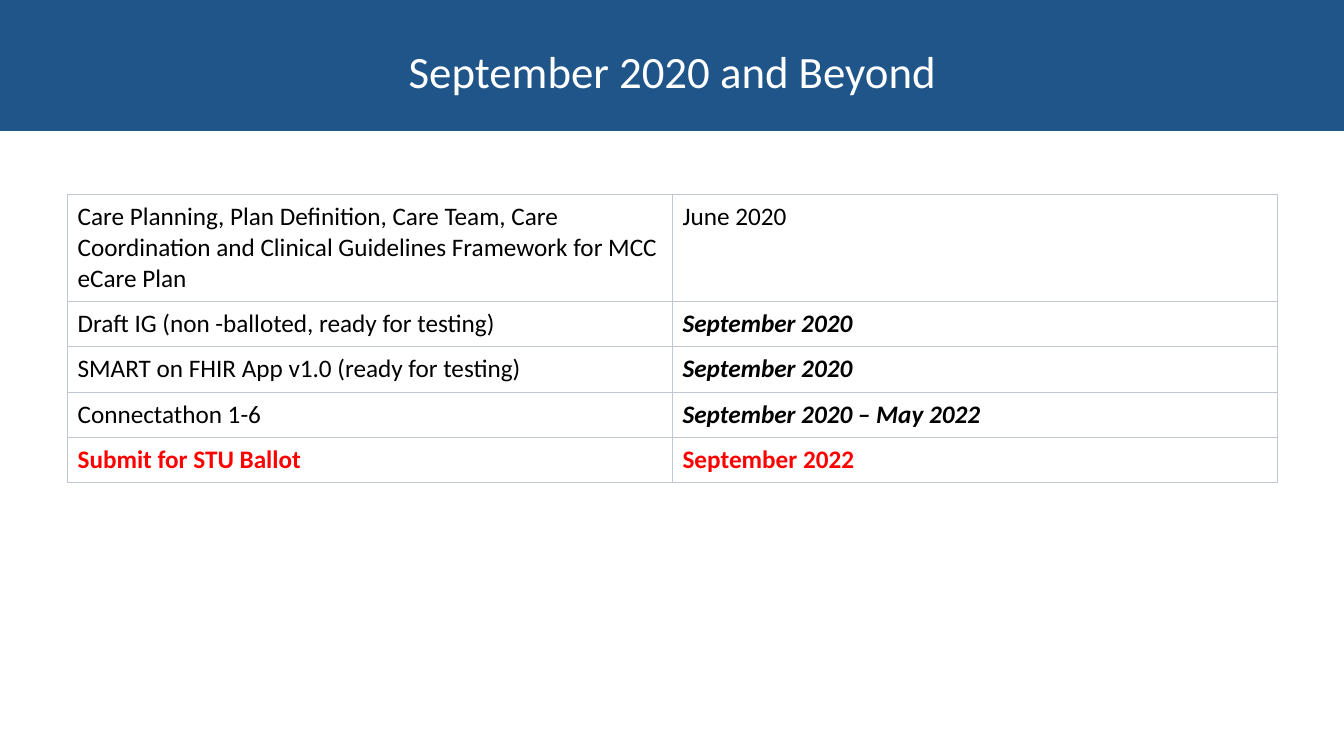
"""Builds the "September 2020 and Beyond" milestone slide."""
from dataclasses import dataclass

from lxml.etree import SubElement
from pptx import Presentation
from pptx.dml.color import RGBColor
from pptx.enum.shapes import MSO_SHAPE
from pptx.enum.text import MSO_ANCHOR, PP_ALIGN
from pptx.oxml.ns import qn
from pptx.slide import Slide
from pptx.table import _Cell
from pptx.text.text import _Paragraph
from pptx.util import Inches, Pt

BLUE = RGBColor(0x20, 0x55, 0x8A)
WHITE = RGBColor(0xFF, 0xFF, 0xFF)
BLACK = RGBColor(0x00, 0x00, 0x00)
RED = RGBColor(0xFF, 0x00, 0x00)
BORDER = RGBColor(0xC1, 0xC7, 0xD0)
FONT = "Calibri"


@dataclass(frozen=True)
class Milestone:
    """One table row: a deliverable and its date."""
    task: str
    date: str
    height: float = 0.45
    color: RGBColor = BLACK
    task_bold: bool = False
    date_bold: bool = True
    date_italic: bool = True


MILESTONES = [
    Milestone("Care Planning, Plan Definition, Care Team, Care Coordination and "
              "Clinical Guidelines Framework for MCC eCare Plan", "June 2020",
              height=1.06, date_bold=False, date_italic=False),
    Milestone("Draft IG (non -balloted, ready for testing)", "September 2020"),
    Milestone("SMART on FHIR App v1.0 (ready for testing)", "September 2020"),
    Milestone("Connectathon 1-6", "September 2020 – May 2022"),
    Milestone("Submit for STU Ballot", "September 2022", color=RED,
              task_bold=True, date_italic=False),
]


def add_run(p: _Paragraph, text: str, size: int, color: RGBColor,
            bold: bool = False, italic: bool = False) -> None:
    """Add one formatted run to a paragraph."""
    r = p.add_run()
    r.text = text
    r.font.name = FONT
    r.font.size = Pt(size)
    r.font.color.rgb = color
    r.font.bold = bold
    r.font.italic = italic


def add_header(s: Slide, width: int) -> None:
    """Draw the blue band and the title on it."""
    band = s.shapes.add_shape(MSO_SHAPE.RECTANGLE, 0, 0, width, Inches(1.3))
    band.shadow.inherit = False
    band.fill.solid()
    band.fill.fore_color.rgb = BLUE
    band.line.fill.background()
    sp = s.shapes.add_textbox(Inches(0.67), Inches(0.2), Inches(12), Inches(1))
    tf = sp.text_frame
    tf.word_wrap = True
    tf.vertical_anchor = MSO_ANCHOR.MIDDLE
    p = tf.paragraphs[0]
    p.alignment = PP_ALIGN.CENTER
    add_run(p, "September 2020 and Beyond", 32, WHITE)


def style_cell(cell: _Cell) -> None:
    """Set the margins, borders and fill of a cell."""
    cell.margin_left = cell.margin_right = Inches(0.1)
    cell.margin_top = cell.margin_bottom = Inches(0.07)
    tc_pr = cell._tc.get_or_add_tcPr()
    for side in ("a:lnL", "a:lnR", "a:lnT", "a:lnB"):
        ln = SubElement(tc_pr, qn(side), w=str(Pt(0.75)))
        fill = SubElement(ln, qn("a:solidFill"))
        SubElement(fill, qn("a:srgbClr"), val=str(BORDER))
    cell.fill.solid()
    cell.fill.fore_color.rgb = WHITE


def add_milestones(s: Slide, milestones: list[Milestone]) -> None:
    """Draw the table of milestones."""
    height = Inches(sum(m.height for m in milestones))
    table = s.shapes.add_table(len(milestones), 2, Inches(0.67), Inches(1.93),
                               Inches(12), height).table
    table.first_row = False
    table.horz_banding = False
    for row, m in zip(table.rows, milestones):
        row.height = Inches(m.height)
        task, date = row.cells
        for cell in (task, date):
            style_cell(cell)
        add_run(task.text_frame.paragraphs[0], m.task, 18, m.color, m.task_bold)
        add_run(date.text_frame.paragraphs[0], m.date, 18, m.color,
                m.date_bold, m.date_italic)


def main() -> None:
    """Build and save the presentation."""
    prs = Presentation()
    prs.slide_width = Inches(13.33)
    prs.slide_height = Inches(7.5)
    s = prs.slides.add_slide(prs.slide_layouts[6])
    add_header(s, prs.slide_width)
    add_milestones(s, MILESTONES)
    prs.save("out.pptx")


if __name__ == "__main__":
    main()
